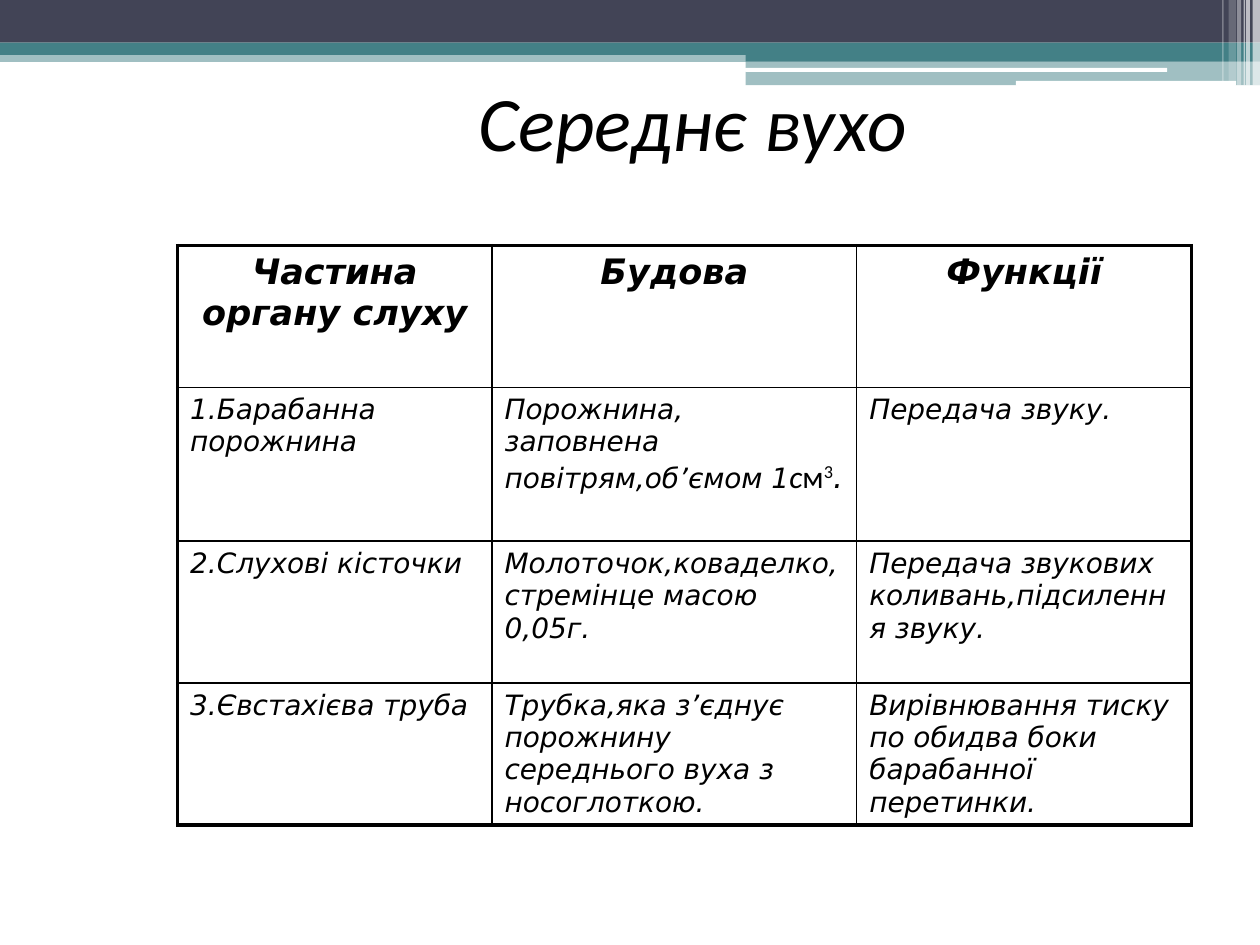
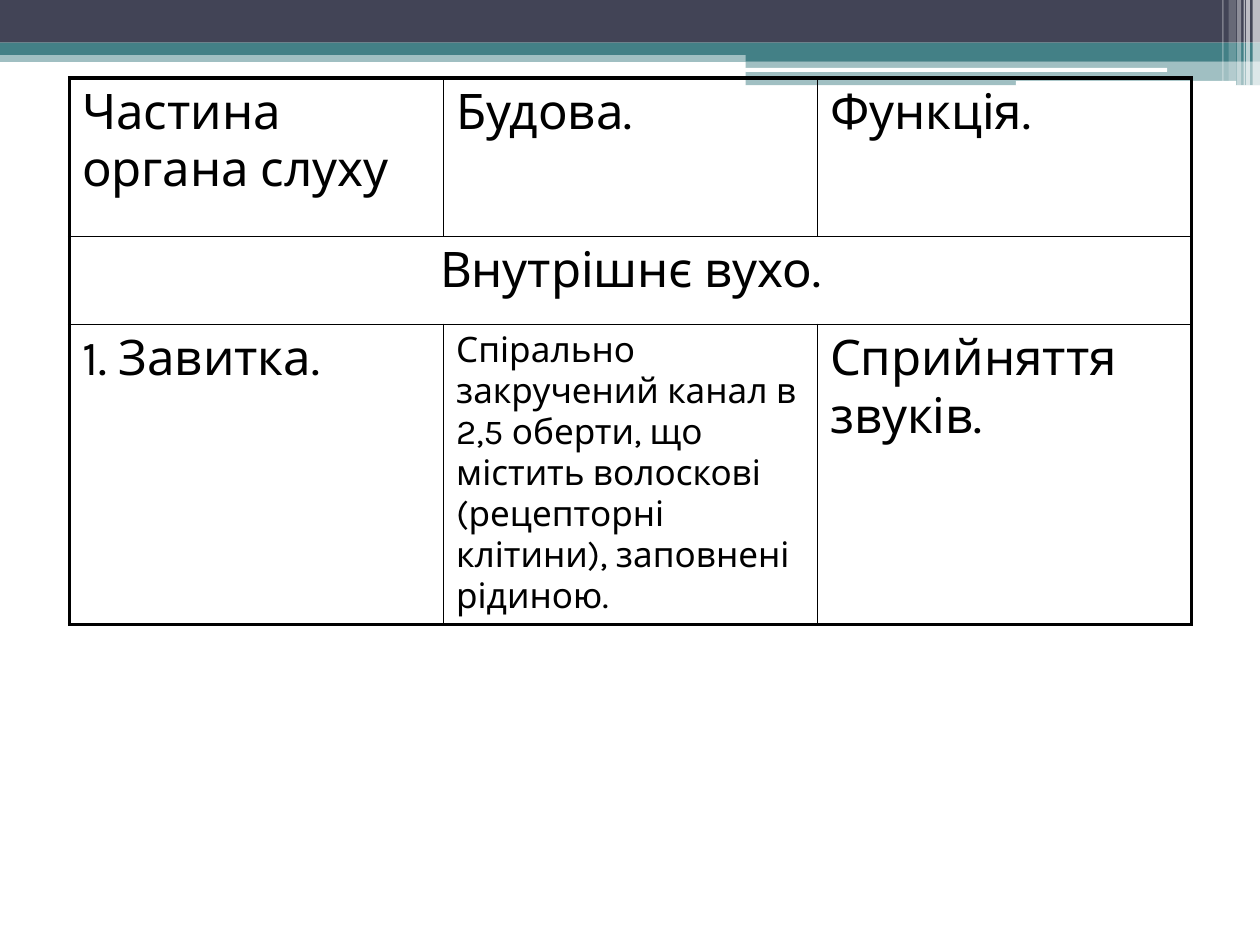
from lxml.etree import SubElement
from pptx import Presentation
from pptx.dml.color import RGBColor
from pptx.enum.shapes import MSO_SHAPE
from pptx.enum.text import MSO_ANCHOR, PP_ALIGN
from pptx.oxml.ns import qn
from pptx.util import Cm, Pt

SLATE = RGBColor(0x42, 0x44, 0x56)
TEAL = RGBColor(0x43, 0x80, 0x86)
WHITE = RGBColor(0xFF, 0xFF, 0xFF)
BLACK = RGBColor(0x00, 0x00, 0x00)
THICK, THIN = Pt(2.25), Pt(1)


def add_text(paragraph, text, size=16, font="DejaVu Sans", bold=False,
             italic=True, superscript=False, align=PP_ALIGN.LEFT):
    paragraph.alignment = align
    run = paragraph.add_run()
    run.text = text
    run.font.size = Pt(size)
    run.font.name = font
    run.font.bold = bold
    run.font.italic = italic
    run.font.color.rgb = BLACK
    if superscript:
        run.font._element.set("baseline", "30000")


def add_grid(slide, left, top, widths, heights, merged_row=None):
    """Add an unfilled table with a thick frame and thin inner lines."""
    row_count, column_count = len(heights), len(widths)
    frame = slide.shapes.add_table(row_count, column_count, Cm(left), Cm(top),
                                   Cm(sum(widths)), Cm(sum(heights)))
    table = frame.table
    table.first_row = table.horz_banding = False
    for column, width in zip(table.columns, widths):
        column.width = Cm(width)
    for row, height in zip(table.rows, heights):
        row.height = Cm(height)
    if merged_row is not None:
        table.cell(merged_row, 0).merge(table.cell(merged_row, column_count - 1))
    for row in range(row_count):
        for column in range(column_count):
            cell = table.cell(row, column)
            if cell.is_spanned:
                continue
            span = cell.span_width if cell.is_merge_origin else 1
            outer_sides = {"lnL": column == 0,
                           "lnR": column + span == column_count,
                           "lnT": row == 0,
                           "lnB": row == row_count - 1}
            properties = cell._tc.get_or_add_tcPr()
            for side, is_outer in outer_sides.items():
                line = SubElement(properties, qn(f"a:{side}"),
                                  w=str(THICK if is_outer else THIN))
                fill = SubElement(line, qn("a:solidFill"))
                SubElement(fill, qn("a:srgbClr"), val=str(BLACK))
            cell.fill.background()
    return table


presentation = Presentation()
presentation.slide_width = Cm(25.4)
presentation.slide_height = Cm(19.05)
middle_ear = presentation.slides.add_slide(presentation.slide_layouts[5])
inner_ear = presentation.slides.add_slide(presentation.slide_layouts[6])

# Header bands and right-hand stripes: left, top, width, height, colour, opacity
BAR, ROUNDED = MSO_SHAPE.RECTANGLE, MSO_SHAPE.ROUNDED_RECTANGLE
header_parts = [
    (BAR, 0, 1.02, 25.4, 0.23, TEAL, 50),
    (BAR, 0, 0, 25.4, 0.86, SLATE, 100),
    (BAR, 0, 0.86, 25.4, 0.25, TEAL, 100),
    (BAR, 15.03, 0.99, 10.37, 0.25, TEAL, 100),
    (BAR, 15.03, 1.24, 10.37, 0.48, TEAL, 50),
    (ROUNDED, 15.02, 1.37, 8.51, 0.08, WHITE, 100),
    (ROUNDED, 20.48, 1.63, 4.44, 0.1, WHITE, 100),
]
stripes = [
    (25.25, 0.15, 1.73, 65),
    (25.12, 0.08, 1.73, 65),
    (25.07, 0.03, 1.73, 60),
    (24.94, 0.08, 1.73, 40),
    (24.77, 0.15, 1.63, 20),
    (24.64, 0.03, 1.63, 30),
]
header_parts += [(BAR, left, 0, width, height, WHITE, opacity)
                 for left, width, height, opacity in stripes]

# The header is moved to the master, so both slides share it
master_tree = presentation.slide_master.shapes._spTree
for kind, left, top, width, height, color, opacity in header_parts:
    shape = middle_ear.shapes.add_shape(kind, Cm(left), Cm(top), Cm(width), Cm(height))
    shape.shadow.inherit = False
    shape.fill.solid()
    shape.fill.fore_color.rgb = color
    shape.line.fill.background()
    if opacity < 100:
        color_element = shape._element.spPr.find(f".//{qn('a:srgbClr')}")
        SubElement(color_element, qn("a:alpha"), val=str(opacity * 1000))
    master_tree.append(shape._element)

# Slide 1: title
title = middle_ear.shapes.title
title.left, title.top, title.width, title.height = Cm(3.81), Cm(0.84), Cm(20.32), Cm(3.18)
title.text_frame.vertical_anchor = MSO_ANCHOR.MIDDLE
add_text(title.text_frame.paragraphs[0], "Середнє вухо", size=44, font="Calibri",
         align=PP_ALIGN.CENTER)

# Slide 1: table of the middle ear
middle_ear_rows = [
    ["Частина органу слуху", "Будова", "Функції"],
    ["1.Барабанна порожнина", "Порожнина, заповнена повітрям,об’ємом 1",
     "Передача звуку."],
    ["2.Слухові кісточки", "Молоточок,коваделко,стремінце масою 0,05г.",
     "Передача звукових коливань,підсилення звуку."],
    ["3.Євстахієва труба", "Трубка,яка з’єднує порожнину середнього вуха з носоглоткою.",
     "Вирівнювання тиску по обидва боки барабанної перетинки."],
]
table = add_grid(middle_ear, 3.58, 4.95, [6.34, 7.35, 6.75], [2.86, 3.1, 2.86, 2.86])
header_format = dict(size=20, bold=True, align=PP_ALIGN.CENTER)
for row, texts in enumerate(middle_ear_rows):
    for column, text in enumerate(texts):
        add_text(table.cell(row, column).text_frame.paragraphs[0], text,
                 **(header_format if row == 0 else {}))

# The volume in the second row ends with a cubic unit
volume = table.cell(1, 1).text_frame.paragraphs[0]
add_text(volume, "с", size=18, font="Calibri")
add_text(volume, "м", size=18, font="Calibri", italic=False)
add_text(volume, "3", size=18, font="Calibri", italic=False, superscript=True)
add_text(volume, ".", size=18)

# Slide 2: table of the inner ear
inner_ear_rows = [
    ["Частина органа слуху", "Будова.", "Функція."],
    ["Внутрішнє вухо."],
    ["1. Завитка.",
     "Спірально закручений канал в 2,5 оберти, що містить волоскові "
     "(рецепторні клітини), заповнені рідиною.",
     "Сприйняття звуків."],
]
table = add_grid(inner_ear, 1.4, 1.57, [7.54] * 3, [3.2, 1.77, 6.05], merged_row=1)
for row, texts in enumerate(inner_ear_rows):
    for column, text in enumerate(texts):
        add_text(table.cell(row, column).text_frame.paragraphs[0], text,
                 size=20 if (row, column) == (2, 1) else 28, font="Karla", italic=False,
                 align=PP_ALIGN.CENTER if row == 1 else PP_ALIGN.LEFT)

presentation.save("out.pptx")
